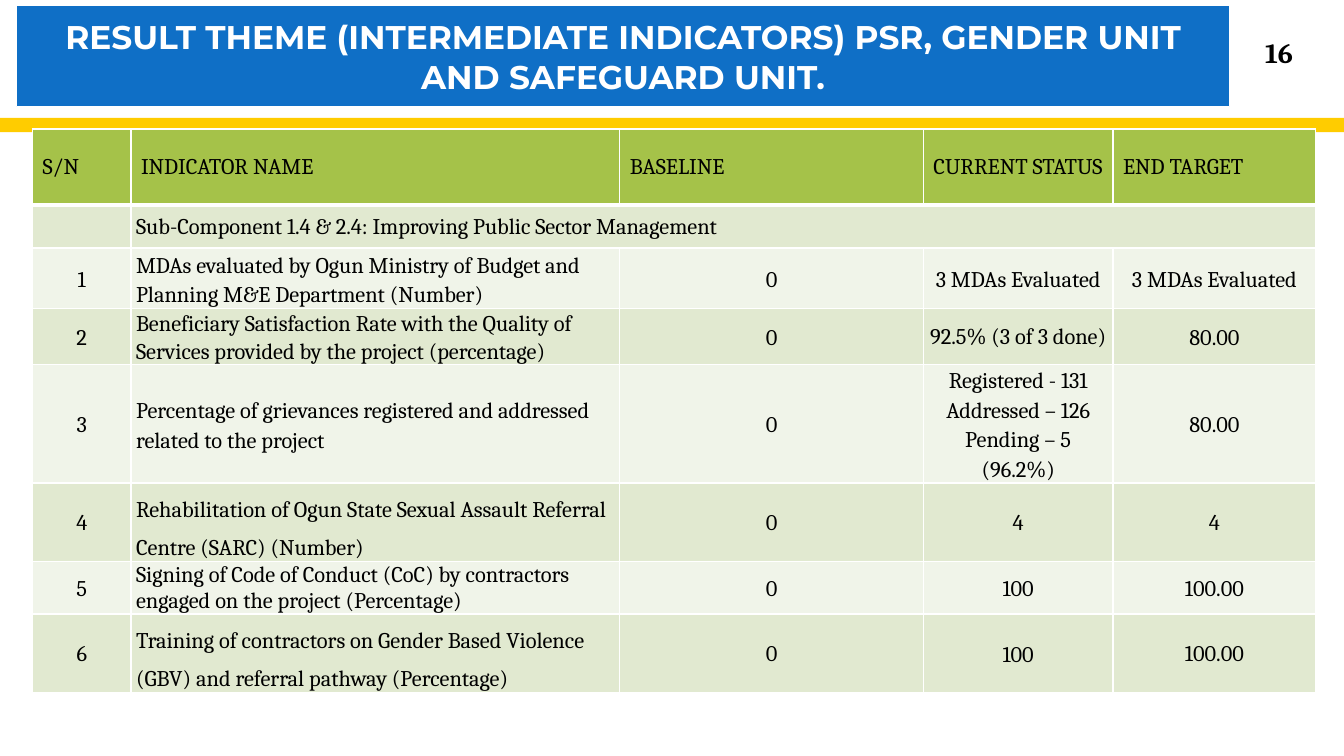
from lxml.etree import SubElement
from pptx import Presentation
from pptx.dml.color import RGBColor
from pptx.enum.shapes import MSO_SHAPE as Shape
from pptx.enum.text import MSO_ANCHOR as Anchor, PP_ALIGN as Align
from pptx.oxml.ns import qn
from pptx.util import Cm, Pt

COLORS = {
    "blue": "0F6FC6",
    "yellow": "FFCC00",
    "header": "A5C249",
    "dark_band": "E1E9D0",
    "light_band": "F0F4E9",
    "white": "FFFFFF",
    "black": "000000",
}
TITLE = "RESULT THEME (INTERMEDIATE INDICATORS) PSR, GENDER UNIT AND SAFEGUARD UNIT."
HEADERS = ["S/N", "INDICATOR NAME", "BASELINE", "CURRENT STATUS", "END TARGET"]
SUBCOMPONENT = "Sub-Component 1.4 & 2.4: Improving Public Sector Management"
# name, name line spacing, name space after, status, status line spacing, target
INDICATORS = [
    ("MDAs evaluated by Ogun Ministry of Budget and Planning M&E Department (Number)",
     1.15, 0, "3 MDAs Evaluated", 1.15, "3 MDAs Evaluated"),
    ("Beneficiary Satisfaction Rate with the Quality of Services provided by the "
     "project (percentage)", 1.07, 8, "92.5% (3 of 3 done)", 1.07, "80.00"),
    ("Percentage of grievances registered and addressed related to the project",
     1.15, 0, "Registered - 131\nAddressed – 126\nPending – 5\n(96.2%)", 1.15, "80.00"),
    ("Rehabilitation of Ogun State Sexual Assault Referral Centre (SARC) (Number)",
     1.5, 8, "4", 1.07, "4"),
    ("Signing of Code of Conduct (CoC) by contractors engaged on the project (Percentage)",
     1.0, 0, "100", 1.15, "100.00"),
    ("Training of contractors on Gender Based Violence (GBV) and referral pathway "
     "(Percentage)", 1.5, 8, "100", 1.15, "100.00"),
]
COLUMN_WIDTHS = [2.48, 12.32, 7.65, 4.78, 5.11]
ROW_HEIGHTS = [1.91, 1.09, 1.42, 1.35, 2.87, 1.83, 1.3, 1.83]
WIDE_INSETS = (0.13, 0.03, 0.13, 0)
NARROW_INSETS = (0.03, 0.03, 0.03, 0)
NO_INSETS = (0, 0, 0, 0)


def rgb(name):
    return RGBColor.from_string(COLORS[name])


def write(frame, text, size=16, font="Cambria", color="black", bold=False,
          align=Align.LEFT, spacing=1.0, after=0):
    """Fill a text frame with one paragraph per line of text."""
    frame.word_wrap = True
    frame.text = text
    for paragraph in frame.paragraphs:
        paragraph.alignment = align
        paragraph.line_spacing = spacing
        paragraph.space_after = Pt(after)
        for run in paragraph.runs:
            run.font.size = Pt(size)
            run.font.name = font
            run.font.bold = bold
            run.font.color.rgb = rgb(color)


def add_bar(slide, left, top, width, height, color, outline=None):
    bar = slide.shapes.add_shape(
        Shape.RECTANGLE, Cm(left), Cm(top), Cm(width), Cm(height))
    bar.shadow.inherit = False
    bar.fill.solid()
    bar.fill.fore_color.rgb = rgb(color)
    if outline:
        bar.line.color.rgb = rgb(outline)
        bar.line.width = Pt(0.75)
    else:
        bar.line.fill.background()
    return bar


def add_page_number(slide, number):
    box = slide.shapes.add_textbox(Cm(30.99), Cm(0.81), Cm(2.49), Cm(1.02))
    box.text_frame.vertical_anchor = Anchor.MIDDLE
    write(box.text_frame, number, size=20, bold=True, align=Align.CENTER)


def set_borders(cell, top=1, bottom=1):
    properties = cell._tc.get_or_add_tcPr()
    for side, width in (("L", 1), ("R", 1), ("T", top), ("B", bottom)):
        line = SubElement(properties, qn(f"a:ln{side}"), w=str(Pt(width)))
        fill = SubElement(line, qn("a:solidFill"))
        SubElement(fill, qn("a:srgbClr"), val=COLORS["white"])


def write_cell(cell, text, insets=None, **text_format):
    cell.vertical_anchor = Anchor.MIDDLE
    if insets:
        (cell.margin_left, cell.margin_top,
         cell.margin_right, cell.margin_bottom) = map(Cm, insets)
    write(cell.text_frame, text, **text_format)


def style_grid(table):
    """Set column widths, row heights, borders and the banded fills."""
    for column, width in zip(table.columns, COLUMN_WIDTHS):
        column.width = Cm(width)
    for index, (row, height) in enumerate(zip(table.rows, ROW_HEIGHTS)):
        row.height = Cm(height)
        band = "dark_band" if index % 2 else "light_band"
        for cell in row.cells:
            set_borders(cell, top=3 if index == 1 else 1, bottom=3 if index == 0 else 1)
            cell.fill.solid()
            cell.fill.fore_color.rgb = rgb(band if index else "header")


def add_indicator_table(slide):
    table = slide.shapes.add_table(
        len(ROW_HEIGHTS), len(COLUMN_WIDTHS), Cm(0.82), Cm(3.25),
        Cm(sum(COLUMN_WIDTHS)), Cm(sum(ROW_HEIGHTS))).table
    style_grid(table)
    for column, header in enumerate(HEADERS):
        write_cell(table.cell(0, column), header)
    table.cell(1, 1).merge(table.cell(1, 4))
    write_cell(table.cell(1, 1), SUBCOMPONENT, WIDE_INSETS)

    centred = {"align": Align.CENTER, "spacing": 1.07}
    for number, indicator in enumerate(INDICATORS, start=1):
        name, name_spacing, name_after, status, status_spacing, target = indicator
        serial_cell, name_cell, baseline_cell, status_cell, target_cell = (
            table.cell(number + 1, column) for column in range(len(HEADERS)))
        write_cell(serial_cell, str(number), NARROW_INSETS, after=8, **centred)
        write_cell(name_cell, name, WIDE_INSETS, spacing=name_spacing, after=name_after)
        write_cell(baseline_cell, "0", NARROW_INSETS, **centred)
        write_cell(status_cell, status, NO_INSETS, align=Align.CENTER,
                   spacing=status_spacing)
        write_cell(target_cell, target, NARROW_INSETS, **centred)


def add_title(slide):
    banner = add_bar(slide, 0.41, 0.15, 30.58, 2.54, "blue", outline="white")
    banner.text_frame.vertical_anchor = Anchor.MIDDLE
    write(banner.text_frame, TITLE, size=23.4, font="Montserrat", color="white",
          bold=True, align=Align.CENTER)


def main():
    deck = Presentation()
    deck.slide_width, deck.slide_height = Cm(33.87), Cm(19.05)
    slide = deck.slides.add_slide(deck.slide_layouts[6])
    add_bar(slide, 0, 2.97, 33.87, 0.36, "yellow")
    add_indicator_table(slide)
    add_page_number(slide, "16")
    add_title(slide)
    deck.save("out.pptx")


if __name__ == "__main__":
    main()
